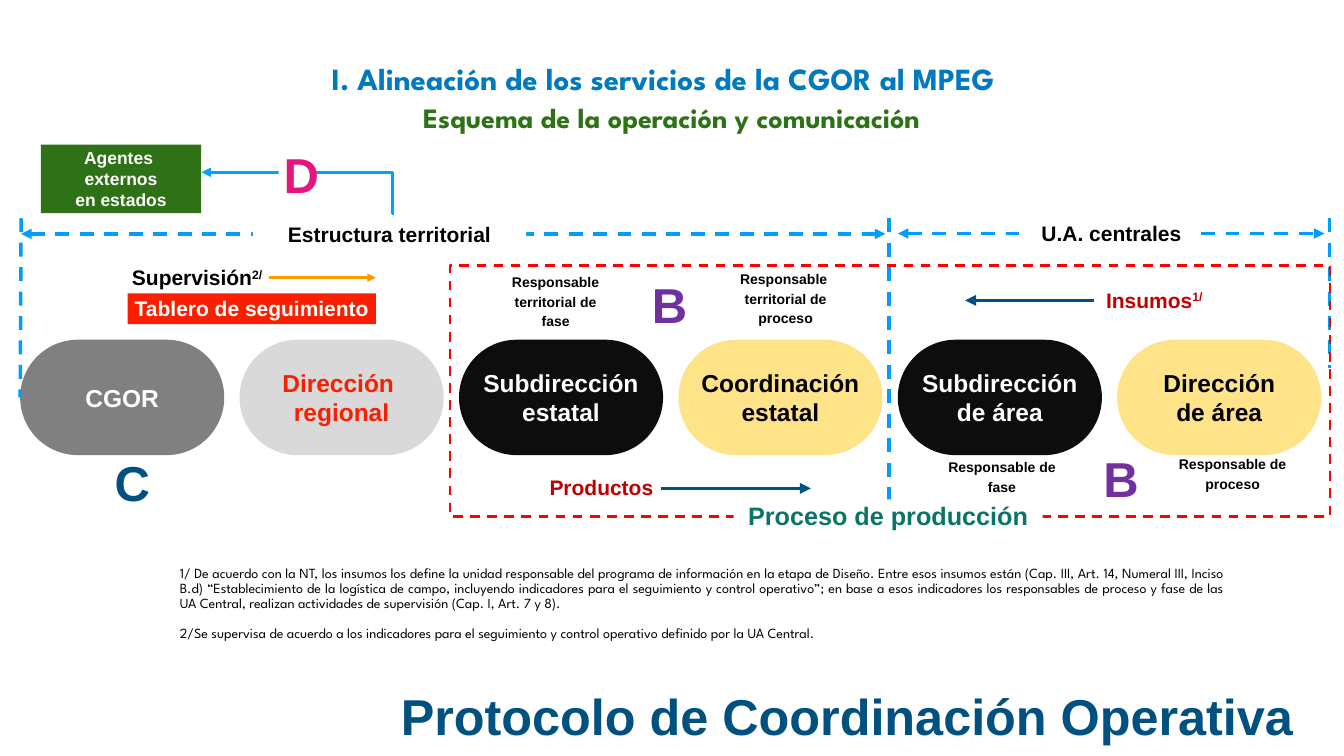
from lxml.etree import SubElement
from pptx import Presentation
from pptx.dml.color import RGBColor
from pptx.enum.dml import MSO_LINE_DASH_STYLE as DASH
from pptx.enum.shapes import MSO_CONNECTOR as CONN, MSO_SHAPE as SHAPE
from pptx.enum.text import MSO_ANCHOR as ANCHOR, MSO_AUTO_SIZE as FIT, PP_ALIGN as ALIGN
from pptx.oxml.ns import qn
from pptx.util import Pt

C = {"white": "FFFFFF", "black": "000000", "ink": "0D0D0D", "grey": "808080",
     "silver": "D9D9D9", "sand": "FFE389", "red": "FA1F00", "frame": "FF0000",
     "wine": "C00000", "navy": "005180", "sky": "009EF9", "link": "00A2FF",
     "title": "0079BF", "green": "2E7116", "teal": "0B7468", "orange": "FF9900",
     "purple": "7030A0", "pink": "E4177D"}
HEAD, BODY = "League Spartan", "Arial"


def rgb(name):
    return RGBColor.from_string(C[name])


def font(size, name=BODY, bold=True):
    return {"size": Pt(size), "name": name, "bold": bold}


def para(**values):
    return {"alignment": ALIGN.CENTER, "space_before": Pt(0), **values}


def shift(box, dx, dy, w=0, h=0):
    """Box or point placed relative to the corner of a region."""
    return (box[0] + dx, box[1] + dy, w, h)


def write(shape, lines, color, look, layout=None, gap=0, wrap=True, anchor=ANCHOR.MIDDLE):
    """One paragraph per line; text after ^ is superscript."""
    tf = shape.text_frame
    for key, value in {"auto_size": FIT.NONE, "word_wrap": wrap, "vertical_anchor": anchor}.items():
        setattr(tf, key, value)
    for i, line in enumerate(lines):
        p = tf.paragraphs[0] if i == 0 else tf.add_paragraph()
        for key, value in (layout or para()).items():
            setattr(p, key, value)
        if i:
            p.space_before = Pt(gap)
        for j, part in enumerate(line.split("^")):
            r = p.add_run()
            r.text = part
            for key, value in look.items():
                setattr(r.font, key, value)
            r.font.color.rgb = rgb(color)
            if j:
                r._r.get_or_add_rPr().set("baseline", "30000")


def block(s, box, fill=None, kind=SHAPE.RECTANGLE):
    sp = s.shapes.add_shape(kind, *map(Pt, box))
    sp.shadow.inherit = False
    sp.line.fill.background()
    if fill:
        sp.fill.solid()
        sp.fill.fore_color.rgb = rgb(fill)
    else:
        sp.fill.background()
    return sp


def label(s, box, lines, color, look, fill=None, **options):
    sp = block(s, box, fill) if fill else s.shapes.add_textbox(*map(Pt, box))
    write(sp, lines, color, look, **options)


def connect(s, start, end, color, width, ends=(), dash=None, kind=CONN.STRAIGHT):
    cx = s.shapes.add_connector(kind, *map(Pt, (*start[:2], *end[:2])))
    cx.line.color.rgb = rgb(color)
    cx.line.width = Pt(width)
    if dash:
        cx.line.dash_style = dash
    for tag in ends:
        SubElement(cx.line._get_or_add_ln(), qn(f"a:{tag}"), type="triangle")
    SubElement(cx._element.spPr, qn("a:effectLst"))
    return cx


def letter(s, x, y, text, color):
    label(s, (x, y, 65.5, 92.2), [text], color, font(70), wrap=False, anchor=ANCHOR.TOP)


def place(ph, box):
    for key, value in zip(("left", "top", "width", "height"), box):
        setattr(ph, key, Pt(value))


def headings(s, box):
    title = s.shapes.title
    place(title, shift(box, 0, 0, 1618, 60.5))
    write(title, ["I. Alineación de los servicios de la CGOR al MPEG"], "title",
          font(44, HEAD), anchor=ANCHOR.TOP)
    label(s, shift(box, 394, 64, 853, 51), ["Esquema de la operación y comunicación"], "green",
          font(40, HEAD), layout=para(line_spacing=0.9), wrap=False, anchor=ANCHOR.TOP)


def closing(s, box):
    ph = s.placeholders[1]
    place(ph, box)
    write(ph, ["Protocolo de Coordinación Operativa"], "navy", font(72), anchor=ANCHOR.TOP)
    tf = ph.text_frame
    for side in ("left", "top", "right", "bottom"):
        setattr(tf, f"margin_{side}", Pt(3.6))
    pPr = tf.paragraphs[0]._p.get_or_add_pPr()
    pPr.set("marL", "0")
    pPr.set("indent", "0")
    SubElement(pPr, qn("a:buNone"))


def span(s, box, text, label_x, label_w):
    """Dashed double arrow across the box, with its name on it."""
    x, y, w, h = box
    mid = y + h / 2
    connect(s, (x, mid), (x + w, mid), "sky", 5, ("headEnd", "tailEnd"), DASH.DASH)
    label(s, (x + label_x, y, label_w, h), [text], "black", font(30), fill="white")


def units(s, box):
    """Row of six units; returns the first."""
    rows = [(["CGOR"], "grey", "white"),
            (["Dirección ", "regional"], "silver", "red"),
            (["Subdirección ", "estatal"], "ink", "white"),
            (["Coordinación estatal"], "sand", "black"),
            (["Subdirección de área"], "ink", "white"),
            (["Dirección", "de área"], "sand", "black")]
    x, y, w, h = box
    unit_w = 291.6
    step = (w - unit_w) / (len(rows) - 1)
    made = []
    for i, (lines, fill, color) in enumerate(rows):
        sp = block(s, (x + i * step, y, unit_w, h), fill, SHAPE.ROUNDED_RECTANGLE)
        sp.adjustments[0] = 0.5
        write(sp, lines, color, font(35))
        made.append(sp)
    return made[0]


def fences(s, box, first_unit):
    x, y, w, h = box
    for dx, length in ((1240, h), (w, 214.6)):
        connect(s, (x + dx, y), (x + dx, y + length), "sky", 5, dash=DASH.DASH)
    left = connect(s, (x, y), (x - 1.4, y + 255.6), "sky", 5, dash=DASH.DASH)
    left.end_connect(first_unit, 1)


def production(s, box):
    frame = block(s, box)
    frame.line.color.rgb = rgb("frame")
    frame.line.width = Pt(3.5)
    frame.line.dash_style = DASH.DASH
    # Flows and name of the process
    for place_at, text, color, size in (
            ((405.3, 334.1, 441.4, 45.4), "Proceso de producción", "teal", 36),
            ((894.9, 20.2, 222.5, 56.9), "Insumos^1/", "wine", 30),
            ((113, 306, 206.6, 20.2), "Productos", "wine", 30)):
        label(s, shift(box, *place_at), [text], color, font(size), fill="white")
    for x1, x2, y in ((301, 515.5, 318.3), (919.4, 735.8, 49.7)):
        connect(s, shift(box, x1, y), shift(box, x2, y), "navy", 5.25, ("tailEnd",))
    # People in charge
    for place_at, lines in (
            ((986.4, 272.9, 263.5, 59.8), ["Responsable de", "proceso"]),
            ((663, 257.1, 251.3, 100.1), ["Responsable de", "fase"]),
            ((347.7, 22.4, 263.5, 59.8), ["Responsable ", "territorial de", "proceso"]),
            ((25.2, 6.5, 251.3, 100.1), ["Responsable", "territorial de", "fase"])):
        label(s, shift(box, *place_at), lines, "black", font(20),
              layout=para(line_spacing=Pt(14)), gap=14)
    for dx, dy in ((280.8, 9.4), (925.9, 257.1)):
        letter(s, *shift(box, dx, dy)[:2], "B", "purple")


def supervision(s, box):
    label(s, shift(box, 0, 0, 326.2, 22.3), ["Supervisión^2/ "], "black", font(30), fill="white")
    connect(s, shift(box, 262.8, 12.2), shift(box, 416, 12.2), "orange", 4, ("tailEnd",))
    label(s, shift(box, 61.2, 34.5, 355, 43.9), ["Tablero de seguimiento"], "white", font(30),
          fill="red", wrap=False, anchor=ANCHOR.TOP)
    letter(s, *shift(box, 35.2, 257.7)[:2], "C", "navy")


def agents(s, box):
    label(s, shift(box, 0, 0, 229, 97.9), ["Agentes ", "externos", "en estados"], "white",
          font(25), fill="green", anchor=ANCHOR.TOP)
    elbow = connect(s, shift(box, 504.7, 98), shift(box, 229.7, 39.6), "link", 4.5,
                    ("tailEnd",), kind=CONN.ELBOW)
    guides = elbow._element.spPr.find(qn("a:prstGeom")).get_or_add_avLst()
    SubElement(guides, qn("a:gd"), name="adj1", fmla="val 800")
    label(s, shift(box, 339.9, -4.3, 53.3, 94.3), ["D"], "pink", font(70), fill="white",
          anchor=ANCHOR.TOP)


def footnotes(s, box):
    label(s, box, [
        "1/ De acuerdo con la NT, los insumos los define la unidad responsable del programa de "
        "información en la etapa de Diseño. Entre esos insumos están (Cap. III, Art. 14, Numeral "
        "III, Inciso B.d) “Establecimiento de la logística de campo, incluyendo indicadores para "
        "el seguimiento y control operativo”; en base a esos indicadores los responsables de "
        "proceso y fase de las UA Central, realizan actividades de supervisión (Cap. I, Art. 7 y 8).",
        "2/Se supervisa de acuerdo a los indicadores para el seguimiento y control operativo "
        "definido por la UA Central."], "black", font(20, HEAD, False),
        layout=para(alignment=ALIGN.JUSTIFY, line_spacing=0.9), gap=21.5, anchor=ANCHOR.TOP)


def main():
    prs = Presentation()
    prs.slide_width, prs.slide_height = Pt(1920.24), Pt(1080)
    s = prs.slides.add_slide(prs.slide_layouts[1])
    headings(s, (139, 81.4))
    closing(s, (521.3, 974.9, 1378.8, 94.3))
    span(s, (30.2, 314.3, 1234.8, 39.6), "Estructura territorial", 331.2, 390.2)
    span(s, (1283, 320.6, 609.1, 26), "U.A. centrales", 182.2, 245.5)
    first_unit = units(s, (28.8, 485.3, 1859, 164.9))
    fences(s, (30.2, 311.8, 1869.2, 429.1), first_unit)
    production(s, (643, 379.4, 1257.1, 358.6))
    supervision(s, (121, 384.5))
    agents(s, (58.3, 206.6))
    footnotes(s, (249.8, 805.7, 1507, 116.6))
    prs.save("out.pptx")


if __name__ == "__main__":
    main()
